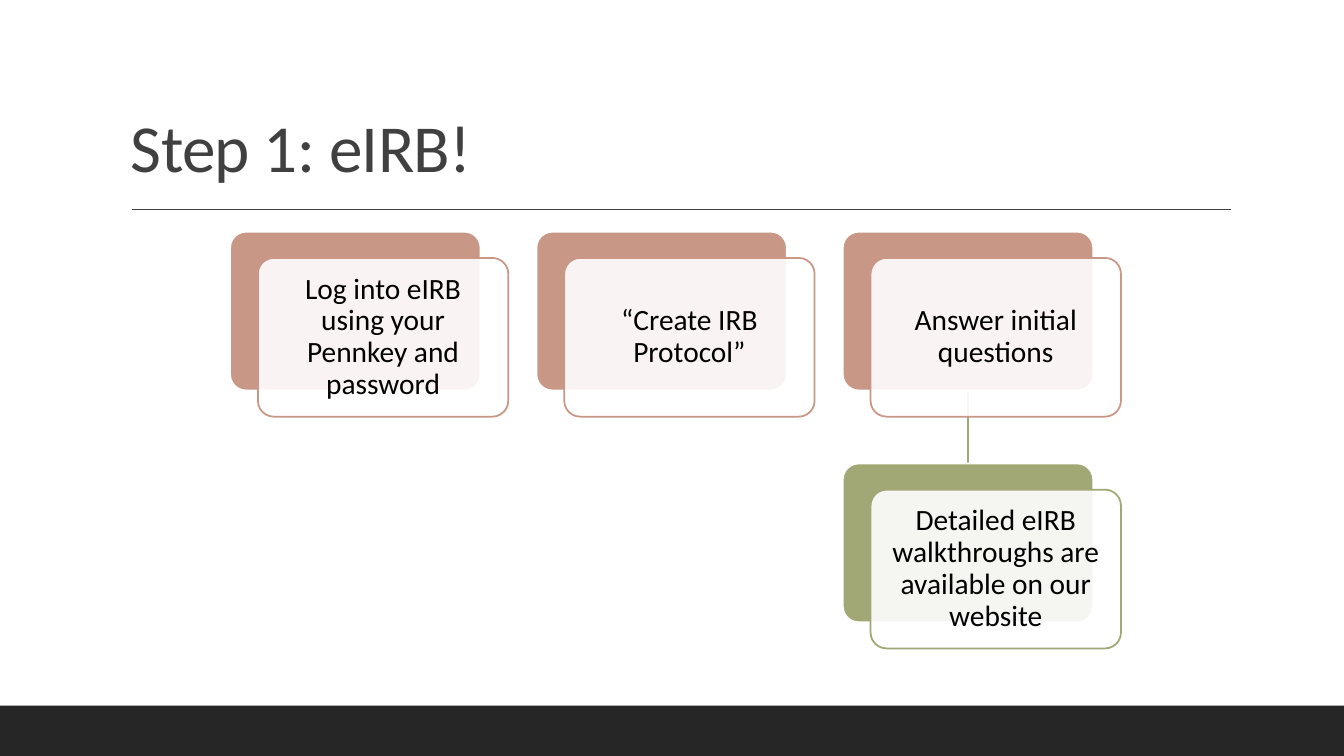
from pptx import Presentation
from pptx.dml.color import RGBColor
from pptx.enum import shapes as kinds, text as txt
from pptx.oxml import ns, xmlchemy as xml
from pptx.util import Cm, Pt

WIDE, HIGH = 33.87, 19.05
FONT = "Calibri"
HEX = {"white": "FFFFFF", "black": "000000", "title": "404040",
       "foot": "262626", "clay": "C89785", "sage": "A2A776"}
STEPS = ["Log into eIRB using your Pennkey and password",
         "“Create IRB Protocol”",
         "Answer initial questions"]
DETAIL = "Detailed eIRB walkthroughs are available on our website"
CARD_W, CARD_H = 6.31, 4.0
SHIFT_X, SHIFT_Y = 0.7, 0.66
STEP_X, STEP_Y = 7.72, 5.84


def color(name):
    return RGBColor.from_string(HEX[name])


def block(slide, kind, box, fill, edge=None):
    shape = slide.shapes.add_shape(kind, *map(Cm, box))
    shape.shadow.inherit = False
    shape.fill.solid()
    shape.fill.fore_color.rgb = color(fill)
    if edge:
        shape.line.color.rgb = color(edge)
        shape.line.width = Pt(1.25)
    else:
        shape.line.fill.background()
    return shape


def rule(slide, ends, tone, width):
    line = slide.shapes.add_connector(kinds.MSO_CONNECTOR.STRAIGHT, *map(Cm, ends))
    line.line.color.rgb = color(tone)
    line.line.width = Pt(width)
    line._element.spPr.append(xml.OxmlElement("a:effectLst"))


def write(frame, words, size, tone, align, anchor):
    frame.word_wrap = True
    frame.vertical_anchor = anchor
    para = frame.paragraphs[0]
    run = para.add_run()
    run.text = words
    para.alignment = align
    para.line_spacing = 0.9
    para.font.name = FONT
    para.font.size = Pt(size)
    para.font.color.rgb = color(tone)
    return run


def header(slide, x, y, w, h):
    box = slide.shapes.add_textbox(Cm(x), Cm(y), Cm(w), Cm(h))
    run = write(box.text_frame, "Step 1: eIRB!", 48, "title",
                txt.PP_ALIGN.LEFT, txt.MSO_ANCHOR.BOTTOM)
    run._r.get_or_add_rPr().set("spc", "-50")
    base = y + h + 0.45
    rule(slide, (x + 0.28, base, x + w + 0.02, base), "title", 1)


def card(slide, x, y, words, tone):
    """Draw a tinted back plate and a see-through front plate with the words."""
    kind = kinds.MSO_SHAPE.ROUNDED_RECTANGLE
    back = block(slide, kind, (x, y, CARD_W, CARD_H), tone, "white")
    front = block(slide, kind, (x + SHIFT_X, y + SHIFT_Y, CARD_W, CARD_H),
                  "white", tone)
    for plate in (back, front):
        plate.adjustments[0] = 0.1
    tint = front._element.spPr.find(ns.qn("a:solidFill"))[0]
    alpha = xml.OxmlElement("a:alpha")
    alpha.set("val", "90000")
    tint.append(alpha)
    frame = front.text_frame
    frame.margin_left = frame.margin_right = Cm(0.23)
    frame.margin_top = frame.margin_bottom = Cm(0.23)
    write(frame, words, 21, "black", txt.PP_ALIGN.CENTER, txt.MSO_ANCHOR.MIDDLE)


def chart(slide, x, y):
    """Place the steps in a row, with the detail below the last one."""
    last, below = x + (len(STEPS) - 1) * STEP_X, y + STEP_Y
    mid = last + CARD_W / 2
    rule(slide, (mid, y + CARD_H, mid, below), "sage", 1.25)
    for i, words in enumerate(STEPS):
        card(slide, x + i * STEP_X, y, words, "clay")
    card(slide, last, below, DETAIL, "sage")


def main():
    deck = Presentation()
    deck.slide_width, deck.slide_height = Cm(WIDE), Cm(HIGH)
    slide = deck.slides.add_slide(deck.slide_layouts[6])
    header(slide, 3.05, 0.79, 27.94, 4.04)
    block(slide, kinds.MSO_SHAPE.RECTANGLE, (0, HIGH - 1.27, WIDE, 1.27), "foot")
    chart(slide, 5.8, 5.84)
    deck.save("out.pptx")


if __name__ == "__main__":
    main()
